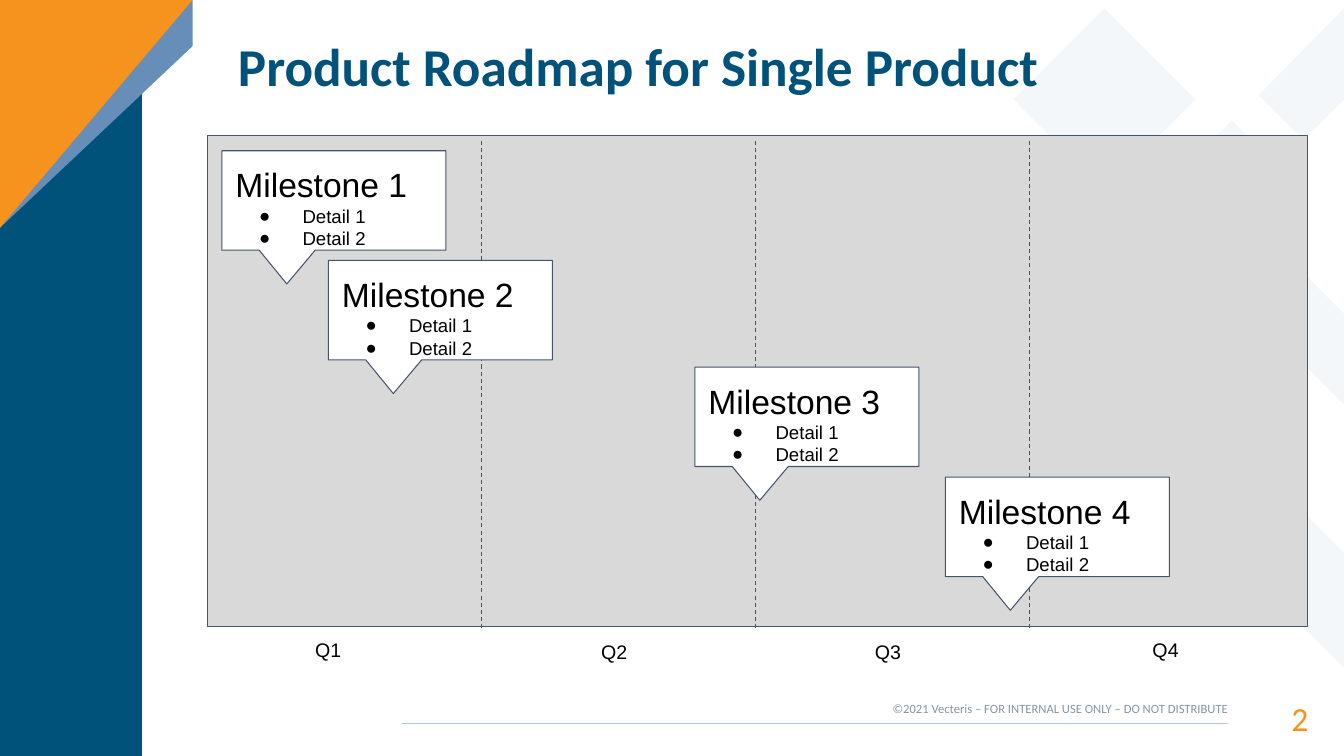
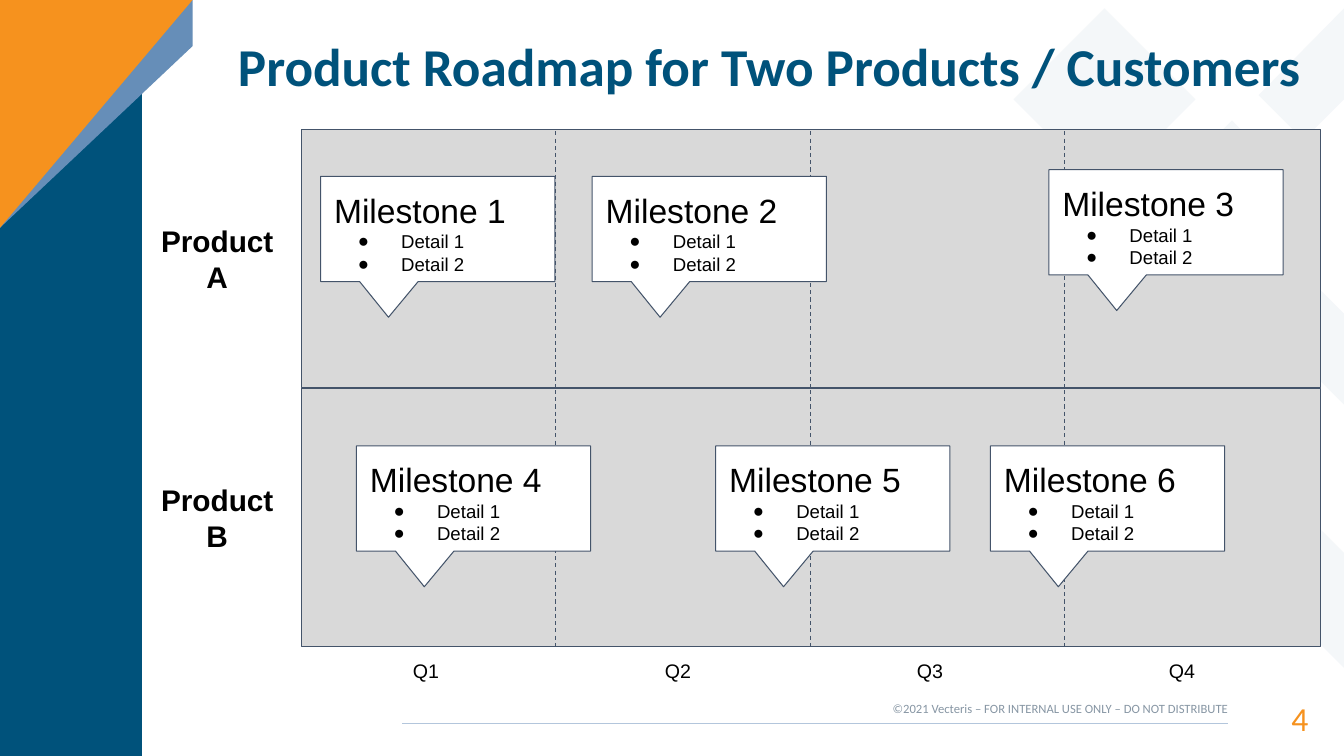
from dataclasses import dataclass
from typing import NamedTuple

from lxml.etree import SubElement
from pptx import Presentation
from pptx.dml.color import RGBColor as Rgb
from pptx.enum.dml import MSO_LINE as Dash
from pptx.enum.shapes import MSO_CONNECTOR as Link, MSO_SHAPE as Kind
from pptx.enum.text import MSO_ANCHOR as Anchor, PP_ALIGN as Align
from pptx.oxml.ns import qn
from pptx.util import Pt


@dataclass(frozen=True)
class Theme:
    navy: str = "00527B"
    steel: str = "668EB8"
    orange: str = "F6921E"
    mist: str = "E9EEF4"
    rule: str = "B3C6DC"
    slate: str = "44546A"
    grey: str = "D9D9D9"
    note: str = "8796A4"
    white: str = "FFFFFF"
    black: str = "000000"
    head: str = "Calibri"
    body: str = "Arial"
    title: float = 38
    large: float = 24
    lane: float = 21.3
    axis: float = 14
    item: float = 13.3
    foot: float = 9
    thin: float = 0.75


class Box(NamedTuple):
    left: float
    top: float
    width: float
    height: float


class Lane(NamedTuple):
    box: Box
    step: float
    inset: float
    name: str = ""


class Mark(NamedTuple):
    left: float
    top: float
    name: str


class Label(NamedTuple):
    mid: float
    top: float


@dataclass(frozen=True)
class Plan:
    title: str
    page: str
    size: tuple[float, float]
    lanes: list[Lane]
    marks: list[Mark]
    labels: list[Label]


THEME = Theme()
PAD = 9.6
FOOT = "©2021 Vecteris – FOR INTERNAL USE ONLY – DO NOT DISTRIBUTE"
BANDS = [
    [(880, 86), (818, 148), (880, 210), (912, 176), (883, 148), (912, 119)],
    [(792, 173), (724, 241), (960, 477), (960, 395), (806, 241), (833, 214)],
    [(931, 195), (899, 228), (960, 289), (960, 224)],
    [(960, 6), (899, 68), (931, 100), (960, 71)],
]
CORNER = [
    (THEME.navy, [(0, 0), (101.5, 0), (101.5, 540), (0, 540)]),
    (THEME.steel, [(137.5, 0), (0, 0), (0, 162.7), (137.5, 33)]),
    (THEME.orange, [(137.5, 0), (0, 0), (0, 162.7)]),
]
PLANS = [
    Plan(
        "Product Roadmap for Single Product", "2", (160, 71),
        [Lane(Box(148.3, 96.8, 786, 350.6), 195.8, 3.6)],
        [
            Mark(158.5, 107.7, "Milestone 1"),
            Mark(234.6, 186, "Milestone 2"),
            Mark(496.4, 262.2, "Milestone 3"),
            Mark(675.3, 340.8, "Milestone 4"),
        ],
        [Label(234.4, 447.1), Label(438.8, 448.6),
         Label(634.3, 448.6), Label(832.6, 447.1)],
    ),
    Plan(
        "Product Roadmap for Two Products / Customers", "4", (167.3, 75.1),
        [
            Lane(Box(215.3, 92.4, 728, 184.6), 181.7, 1.4, "Product A"),
            Lane(Box(215.3, 277.2, 728, 184.6), 181.7, 1.4, "Product B"),
        ],
        [
            Mark(229, 126, "Milestone 1"),
            Mark(423, 126, "Milestone 2"),
            Mark(749.2, 121.2, "Milestone 3"),
            Mark(254.6, 318.5, "Milestone 4"),
            Mark(511.2, 318.5, "Milestone 5"),
            Mark(707.5, 318.5, "Milestone 6"),
        ],
        [Label(304.3 + 180 * i, 462.2) for i in range(4)],
    ),
]


def paint(shape, fill: str, line: str = "", alpha: int = 100) -> None:
    shape.shadow.inherit = False
    shape.fill.solid()
    shape.fill.fore_color.rgb = Rgb.from_string(fill)
    if alpha < 100:
        tint = shape.element.spPr.find(qn("a:solidFill"))[0]
        SubElement(tint, qn("a:alpha"), val=str(alpha * 1000))
    if line:
        shape.line.color.rgb = Rgb.from_string(line)
        shape.line.width = Pt(THEME.thin)
    else:
        shape.line.fill.background()


def block(slide, kind: Kind, box: Box, fill: str, line: str = "",
          alpha: int = 100):
    shape = slide.shapes.add_shape(kind, *map(Pt, box))
    paint(shape, fill, line, alpha)
    return shape


def shard(slide, points: list, fill: str, alpha: int = 100) -> None:
    """Draw a closed outline without a border."""
    first, *rest = [(Pt(x), Pt(y)) for x, y in points]
    form = slide.shapes.build_freeform(*first, scale=1.0)
    form.add_line_segments(rest, close=True)
    paint(form.convert_to_shape(), fill, alpha=alpha)


def stroke(slide, x1: float, y1: float, x2: float, y2: float,
           color: str, width: float, dash: bool = False) -> None:
    line = slide.shapes.add_connector(
        Link.STRAIGHT, Pt(x1), Pt(y1), Pt(x2), Pt(y2))
    line.line.color.rgb = Rgb.from_string(color)
    line.line.width = Pt(width)
    if dash:
        line.line.dash_style = Dash.DASH
    SubElement(line.element.spPr, qn("a:effectLst"))


def frame(shape, pad: float, anchor: Anchor = Anchor.TOP):
    body = shape.text_frame
    body.word_wrap = True
    body.vertical_anchor = anchor
    body.margin_left = body.margin_right = Pt(pad)
    body.margin_top = body.margin_bottom = Pt(pad)
    return body


def write(para, text: str, size: float, font: str, color: str,
          bold: bool = False) -> None:
    run = para.add_run()
    run.text = text
    run.font.size = Pt(size)
    run.font.name = font
    run.font.bold = bold
    run.font.color.rgb = Rgb.from_string(color)


def label(slide, box: Box, text: str, size: float, font: str, color: str,
          align: Align = Align.LEFT, anchor: Anchor = Anchor.TOP,
          pad: float = 0, bold: bool = False, space: float = 1.0) -> None:
    shape = slide.shapes.add_textbox(*map(Pt, box))
    para = frame(shape, pad, anchor).paragraphs[0]
    para.alignment = align
    para.line_spacing = space
    write(para, text, size, font, color, bold)


def bullet(para) -> None:
    props = para._p.get_or_add_pPr()
    props.set("marL", str(Pt(48)))
    props.set("indent", str(Pt(-31)))
    tint = SubElement(props, qn("a:buClr"))
    SubElement(tint, qn("a:srgbClr"), val=THEME.black)
    SubElement(props, qn("a:buFont"), typeface=THEME.body)
    SubElement(props, qn("a:buChar"), char="●")


def callout(slide, mark: Mark, size: tuple[float, float]) -> None:
    shape = block(slide, Kind.RECTANGULAR_CALLOUT,
                  Box(mark.left, mark.top, *size), THEME.white, THEME.slate)
    shape.adjustments[0] = -0.21
    shape.adjustments[1] = 0.84
    body = frame(shape, PAD)
    head = body.paragraphs[0]
    head.alignment = Align.LEFT
    write(head, mark.name, THEME.large, THEME.body, THEME.black)
    for text in ("Detail 1", "Detail 2"):
        para = body.add_paragraph()
        para.alignment = Align.LEFT
        bullet(para)
        write(para, text, THEME.item, THEME.body, THEME.black)


def track(slide, lane: Lane) -> None:
    """Draw a lane with its quarter lines and its name."""
    box = lane.box
    block(slide, Kind.RECTANGLE, box, THEME.grey, THEME.slate)
    for i in range(1, 4):
        x = box.left + i * lane.step
        stroke(slide, x, box.top + lane.inset, x, box.top + box.height + 1,
               THEME.slate, THEME.thin, dash=True)
    if lane.name:
        mid = box.top + box.height / 2
        label(slide, Box(104.4, mid - 25, 101.5, 50), lane.name, THEME.lane,
              THEME.body, THEME.black, Align.CENTER, Anchor.MIDDLE, PAD,
              bold=True)


def base(slide, plan: Plan) -> None:
    """Draw the backdrop, title and footer that every slide has."""
    block(slide, Kind.DIAMOND, Box(724, 6, 130, 130), THEME.mist, alpha=47)
    for points in BANDS:
        shard(slide, points, THEME.mist, 47)
    for color, points in CORNER:
        shard(slide, points, color)
    label(slide, Box(170, 25.2, 790, 49), plan.title, THEME.title, THEME.head,
          THEME.navy, anchor=Anchor.MIDDLE, bold=True, space=0.9)
    stroke(slide, 287.5, 517, 877.5, 517, THEME.rule, 0.82)
    label(slide, Box(877, 496.8, 57.6, 27.4), plan.page, THEME.large,
          THEME.head, THEME.orange, Align.RIGHT, Anchor.MIDDLE, space=1.19)
    label(slide, Box(570, 500.4, 307, 11), FOOT, THEME.foot, THEME.head,
          THEME.note, Align.RIGHT)


def build(slide, plan: Plan) -> None:
    base(slide, plan)
    for lane in plan.lanes:
        track(slide, lane)
    for mark in plan.marks:
        callout(slide, mark, plan.size)
    for i, spot in enumerate(plan.labels, 1):
        label(slide, Box(spot.mid - 36, spot.top, 72, 30), f"Q{i}",
              THEME.axis, THEME.body, THEME.black, Align.CENTER, pad=PAD)


def main() -> None:
    deck = Presentation()
    deck.slide_width = Pt(960)
    deck.slide_height = Pt(540)
    for plan in PLANS:
        build(deck.slides.add_slide(deck.slide_layouts[6]), plan)
    deck.save("out.pptx")


if __name__ == "__main__":
    main()
